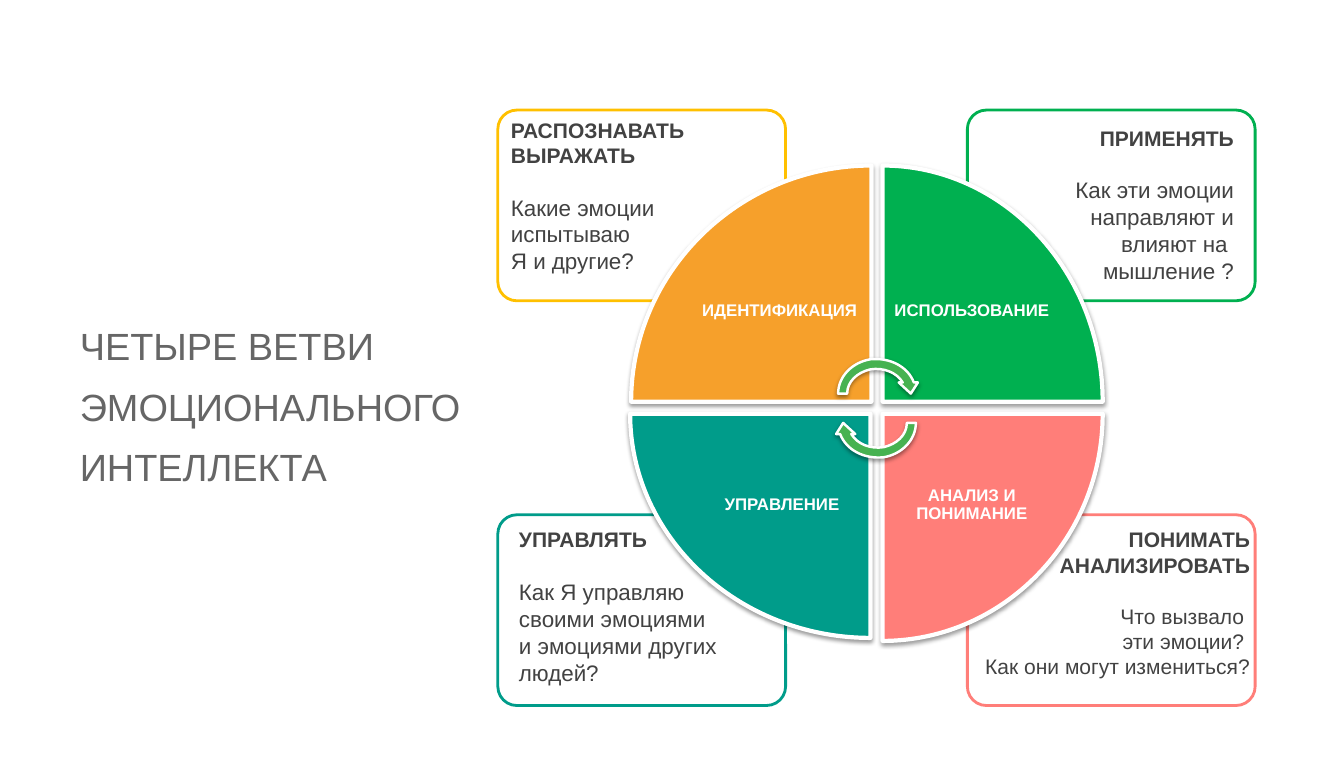
from lxml import etree
from pptx import Presentation
from pptx.dml.color import RGBColor
from pptx.enum import shapes, text
from pptx.oxml.ns import qn
from pptx.util import Inches, Pt

ALIGN = text.PP_ALIGN
GREY, WHITE, ARROW = "424242", "FFFFFF", "47B251"


def colour(value):
    return RGBColor.from_string(value)


def add_outline(start, segments):
    points = [tuple(map(Inches, point)) for segment in segments for point in segment]
    builder = page.shapes.build_freeform(*map(Inches, start))
    builder.add_line_segments(points, close=True)
    outline = builder.convert_to_shape()
    lines = iter(outline._element.findall(".//" + qn("a:lnTo")))
    for segment in segments:
        steps = [next(lines) for _ in segment]
        if len(steps) == 3:
            curve = etree.Element(qn("a:cubicBezTo"))
            steps[0].addprevious(curve)
            for step in steps:
                curve.append(step[0])
                step.getparent().remove(step)
    return outline


deck = Presentation()
deck.slide_width, deck.slide_height = Inches(13.31), Inches(7.5)
page = deck.slides.add_slide(deck.slide_layouts[5])

for left, top, border in [
    (9.58, 5.1, "FF7E79"),
    (4.93, 5.1, "009C8A"),
    (9.58, 1.09, "00B050"),
    (4.93, 1.09, "FFC000"),
]:
    card = page.shapes.add_shape(
        shapes.MSO_SHAPE.ROUNDED_RECTANGLE,
        Inches(left), Inches(top), Inches(2.85), Inches(1.89),
    )
    card.adjustments[0] = 0.1
    card.shadow.inherit = False
    card.fill.solid()
    card.fill.fore_color.rgb = colour(WHITE)
    fill_colour = card._element.spPr.find(qn("a:solidFill")).find(qn("a:srgbClr"))
    etree.SubElement(fill_colour, qn("a:alpha"), val="90000")
    card.line.color.rgb = colour(border)
    card.line.width = Pt(2)

figures, texts = [], []
for turn, left, top, width, height, fill, label_left, label_top, label in [
    (0, 6.25, 1.64, 2.38, 2.34, "F6A02B", 6.86, 2.18, "ИДЕНТИФИКАЦИЯ "),
    (90, 8.66, 1.72, 2.34, 2.18, "00B050", 8.74, 2.18, "ИСПОЛЬЗОВАНИЕ"),
    (180, 8.74, 4.1, 2.18, 2.25, "FF7E79", 8.74, 4.1, "АНАЛИЗ И ПОНИМАНИЕ"),
    (270, 6.32, 4.02, 2.22, 2.38, "009C8A", 6.86, 4.1, "УПРАВЛЕНИЕ"),
]:
    right, bottom = left + width, top + height
    quarter = add_outline((left, bottom), [
        [(left, top + 0.45 * height), (left + 0.45 * width, top), (right, top)],
        [(right, bottom)],
    ])
    figures.append((quarter, turn, fill, 3))
    box = page.shapes.add_textbox(
        Inches(label_left), Inches(label_top), Inches(1.77), Inches(1.81)
    )
    texts.append((box, [label], [], 12, 12, WHITE, ALIGN.CENTER, 0.9, 0.07, 0.07))

for turn in (0, 180):
    arrow = add_outline((8.3, 3.9), [
        [(8.3, 3.73), (8.44, 3.59), (8.62, 3.56)],
        [(8.81, 3.54), (8.99, 3.63), (9.05, 3.79)],
        [(9.09, 3.79)], [(9.02, 3.9)], [(8.9, 3.79)], [(8.94, 3.79)],
        [(8.88, 3.69), (8.75, 3.64), (8.62, 3.66)],
        [(8.49, 3.69), (8.39, 3.78), (8.39, 3.9)],
    ])
    if turn:
        arrow.left = Inches(17.37) - arrow.left - arrow.width
        arrow.top = Inches(8.09) - arrow.top - arrow.height
    figures.append((arrow, turn, ARROW, 1.75))

for figure, turn, fill, width in figures:
    figure.rotation = turn
    figure.fill.solid()
    figure.fill.fore_color.rgb = colour(fill)
    figure.line.color.rgb = colour(WHITE)
    figure.line.width = Pt(width)
    figure.shadow.inherit = False
    effects = figure._element.spPr.find(qn("a:effectLst"))
    shadow = etree.SubElement(
        effects, qn("a:outerShdw"),
        blurRad=str(Pt(3.1)), dist=str(Pt(1.6)), dir="5400000", rotWithShape="0",
    )
    shade = etree.SubElement(shadow, qn("a:srgbClr"), val="000000")
    etree.SubElement(shade, qn("a:alpha"), val="38000")

for place, align, heads, lines, size in [
    ((9.34, 5.15, 3.17, 1.96), ALIGN.RIGHT, ["ПОНИМАТЬ АНАЛИЗИРОВАТЬ"],
     ["Что вызвало \nэти эмоции? ", "Как они могут измениться?"], 15),
    ((5.01, 5.15, 2.83, 1.57), ALIGN.LEFT, ["УПРАВЛЯТЬ"],
     ["Как Я управляю", "своими эмоциями \nи эмоциями других людей?"], 16),
    ((9.9, 1.17, 2.45, 1.43), ALIGN.RIGHT, ["ПРИМЕНЯТЬ"],
     ["Как эти эмоции направляют и", " влияют на ", "мышление ?"], 16),
    ((4.93, 1.09, 2.88, 1.78), ALIGN.LEFT, ["РАСПОЗНАВАТЬ", "ВЫРАЖАТЬ"],
     ["Какие эмоции \nиспытываю\nЯ и другие?"], 16),
]:
    box = page.shapes.add_textbox(*map(Inches, place))
    texts.append((box, heads, lines, 15, size, GREY, align, 1.0, 0.13, 0.07))

title = page.shapes.title
title.left, title.top, title.width, title.height = map(Inches, (0.79, 3.05, 4.7, 1.75))
title_lines = ["ЧЕТЫРЕ ВЕТВИ ЭМОЦИОНАЛЬНОГО", "ИНТЕЛЛЕКТА"]
texts.append((title, [], title_lines, 27, 27, "666666", ALIGN.LEFT, 1.33, 0, 0))

for box, heads, lines, head_size, body_size, ink, align, spacing, side, edge in texts:
    frame = box.text_frame
    middle = align == ALIGN.CENTER
    for name, value in {
        "word_wrap": True,
        "auto_size": text.MSO_AUTO_SIZE.NONE,
        "vertical_anchor": text.MSO_ANCHOR.MIDDLE if middle else text.MSO_ANCHOR.TOP,
        "margin_left": Inches(side),
        "margin_right": Inches(side),
        "margin_top": Inches(edge),
        "margin_bottom": Inches(edge),
    }.items():
        setattr(frame, name, value)
    for index, line in enumerate(heads + lines):
        is_head = index < len(heads)
        size = Pt(head_size if is_head else body_size)
        para = frame.add_paragraph() if index else frame.paragraphs[0]
        para.text = line.replace("\n", "\v")
        para.alignment = align
        para.line_spacing = spacing
        if heads and index == len(heads):
            para.space_before = Pt(18.6)
        for gap in para._p.findall(qn("a:br")):
            etree.SubElement(gap, qn("a:rPr"), sz=str(int(size.pt * 100)))
        for span in para.runs:
            for name, value in {"name": "Arial", "size": size, "bold": is_head}.items():
                setattr(span.font, name, value)
            span.font.color.rgb = colour(ink)

deck.save("out.pptx")
